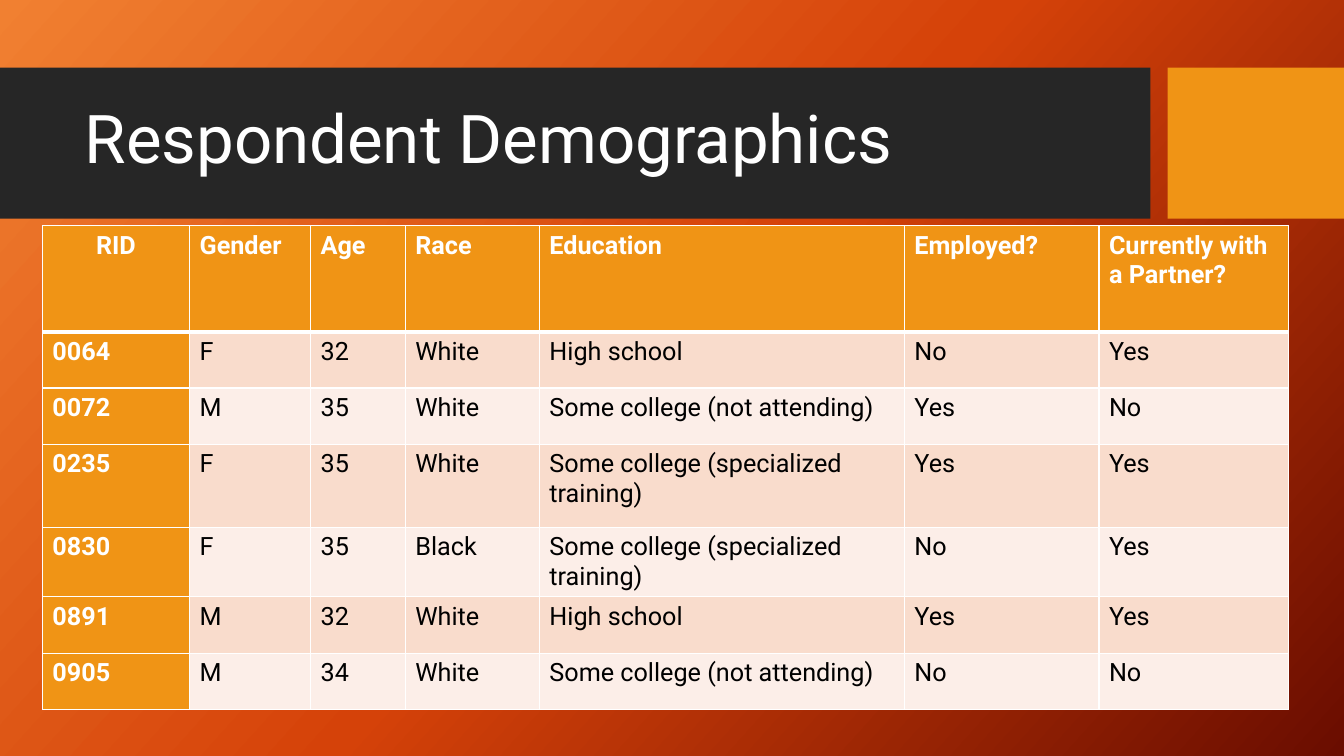
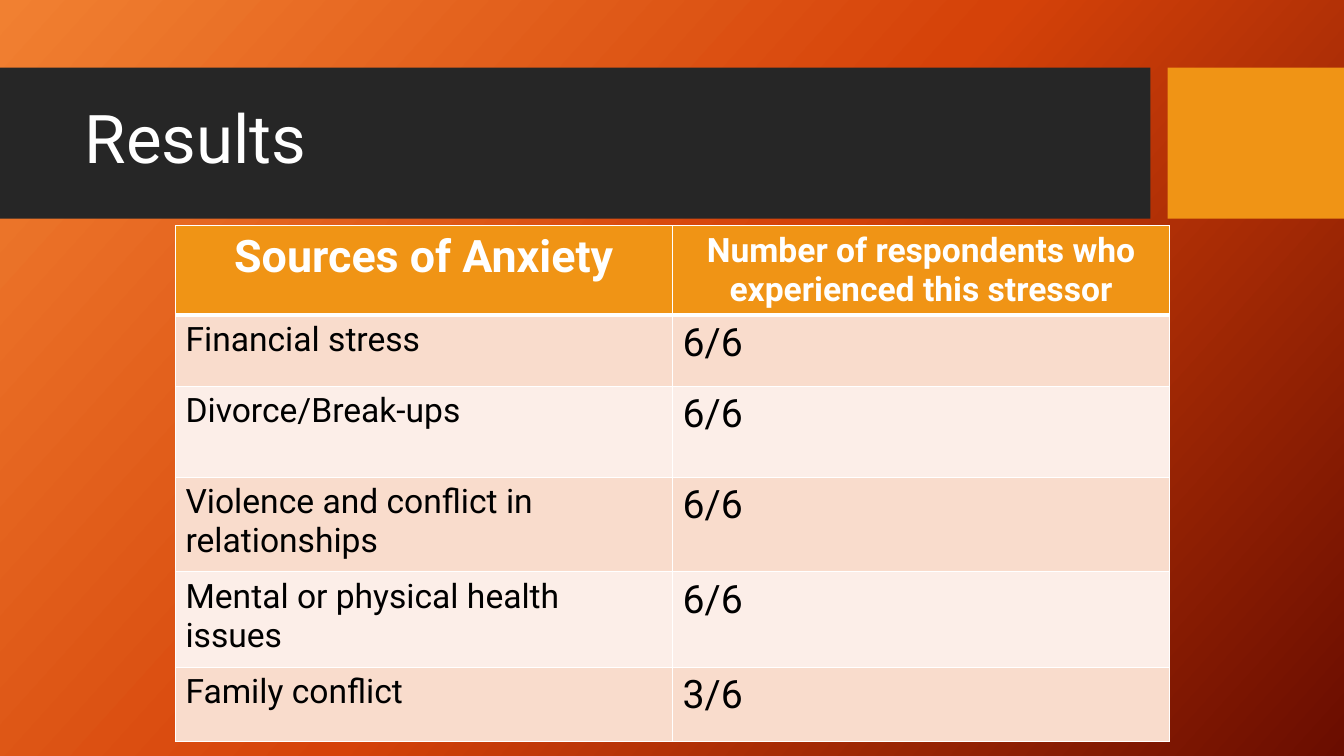
from copy import deepcopy

from lxml import etree
from pptx import Presentation
from pptx.dml.color import RGBColor
from pptx.enum import shapes, text
from pptx.oxml import ns
from pptx.util import Inches, Pt

FONT = "Roboto"
WHITE = RGBColor(0xFF, 0xFF, 0xFF)
BLACK = RGBColor(0x00, 0x00, 0x00)
CHARCOAL = RGBColor(0x26, 0x26, 0x26)
AMBER = RGBColor(0xF0, 0x94, 0x15)
STRIPES = RGBColor(0xF9, 0xDC, 0xCC), RGBColor(0xFC, 0xEE, 0xE8)
GLOW = RGBColor(0xF1, 0x80, 0x31), RGBColor(0xD5, 0x42, 0x09), RGBColor(0x6A, 0x0D, 0x00)

BANDS = [((0, 0.67, 11.41, 1.5), CHARCOAL), ((11.58, 0.67, 1.75, 1.5), AMBER)]
TITLE_BOX = (0.74, 0.82, 10.51, 1.18)
TABLE_TOP = 2.24

DEMOGRAPHICS = [
    ["RID", "Gender", "Age", "Race", "Education", "Employed?", "Currently with a Partner?"],
    ["0064", "F", "32", "White", "High school", "No", "Yes"],
    ["0072", "M", "35", "White", "Some college (not attending)", "Yes", "No"],
    ["0235", "F", "35", "White", "Some college (specialized training)", "Yes", "Yes"],
    ["0830", "F", "35", "Black", "Some college (specialized training)", "No", "Yes"],
    ["0891", "M", "32", "White", "High school", "Yes", "Yes"],
    ["0905", "M", "34", "White", "Some college (not attending)", "No", "No"],
]
STRESSORS = [
    ["Sources of Anxiety", "Number of respondents who experienced this stressor"],
    ["Financial stress", "6/6"],
    ["Divorce/Break-ups", "6/6"],
    ["Violence and conflict in relationships", "6/6"],
    ["Mental or physical health issues", "6/6"],
    ["Family conflict", "3/6"],
]


def paint_background(layout):
    """Give the layout its diagonal three-colour gradient."""
    fill = layout.background.fill
    fill.gradient()
    fill.gradient_angle = 360 - 42
    stop_list = layout.element.find(".//" + ns.qn("a:gsLst"))
    stop_list.append(deepcopy(stop_list[-1]))
    for index, (stop, color) in enumerate(zip(fill.gradient_stops, GLOW)):
        stop.color.rgb = color
        stop.position = index / 2


def style_runs(para, size, color, bold=False):
    """Format every run of a paragraph."""
    for span in para.runs:
        span.font.name = FONT
        span.font.size = Pt(size)
        span.font.bold = bold
        span.font.color.rgb = color


def add_titled_page(deck, layout, title):
    """Add a page with the title bands and the title over them."""
    page = deck.slides.add_slide(layout)
    for box, color in BANDS:
        band = page.shapes.add_shape(shapes.MSO_SHAPE.RECTANGLE, *map(Inches, box))
        band.shadow.inherit = False
        band.fill.solid()
        band.fill.fore_color.rgb = color
        band.line.fill.background()
    heading = page.shapes.title
    page.shapes.element.append(heading.element)
    heading.left, heading.top, heading.width, heading.height = map(Inches, TITLE_BOX)
    frame = heading.text_frame
    frame.text = title
    frame.word_wrap = True
    frame.vertical_anchor = text.MSO_ANCHOR.MIDDLE
    para = frame.paragraphs[0]
    para.alignment = text.PP_ALIGN.LEFT
    para.line_spacing = 0.9
    style_runs(para, 48, WHITE)
    return page


def set_borders(cell, top, bottom):
    """Draw white borders, with the top and bottom widths in points."""
    properties = cell._tc.get_or_add_tcPr()
    for side, width in (("L", 1), ("R", 1), ("T", top), ("B", bottom)):
        line = etree.SubElement(properties, ns.qn("a:ln" + side), w=str(Pt(width)))
        fill = etree.SubElement(line, ns.qn("a:solidFill"))
        etree.SubElement(fill, ns.qn("a:srgbClr"), val=str(WHITE))


def add_grid(page, left, widths, heights, rows, head_sizes, body_sizes, centred, key_column):
    """Add a striped table; centred counts the centred header cells."""
    frame = page.shapes.add_table(
        len(rows), len(widths), Inches(left), Inches(TABLE_TOP),
        Inches(sum(widths)), Inches(sum(heights)))
    table = frame.table
    table.first_col = key_column
    for column, width in zip(table.columns, widths):
        column.width = Inches(width)
    for row, height in zip(table.rows, heights):
        row.height = Inches(height)
    for r, values in enumerate(rows):
        sizes = body_sizes if r else head_sizes
        for c, value in enumerate(values):
            cell = table.cell(r, c)
            accent = r == 0 or (key_column and c == 0)
            set_borders(cell, 3 if r == 1 else 1, 3 if r == 0 else 1)
            cell.fill.solid()
            cell.fill.fore_color.rgb = AMBER if accent else STRIPES[(r - 1) % 2]
            cell.text_frame.text = value
            para = cell.text_frame.paragraphs[0]
            if r == 0 and c < centred:
                para.alignment = text.PP_ALIGN.CENTER
            style_runs(para, sizes[c], WHITE if accent else BLACK, accent)


def add_demographics(deck, layout):
    """Build the page that lists the respondents."""
    page = add_titled_page(deck, layout, "Respondent Demographics")
    add_grid(page, 0.42, [1.46, 1.2, 0.94, 1.33, 3.62, 1.93, 1.88],
             [1.05, 0.56, 0.56, 0.82, 0.69, 0.56, 0.56], DEMOGRAPHICS,
             [18] * 7, [18] * 7, centred=1, key_column=True)


def add_results(deck, layout):
    """Build the page that counts the sources of anxiety."""
    page = add_titled_page(deck, layout, "Results")
    add_grid(page, 1.74, [4.93, 4.93], [0.88, 0.71, 0.9, 0.94, 0.95, 0.73], STRESSORS,
             [32, 24], [24, 28], centred=2, key_column=False)


def main():
    """Build and save the deck."""
    deck = Presentation()
    deck.slide_width, deck.slide_height = Inches(13.33), Inches(7.5)
    layout = deck.slide_layouts[5]
    paint_background(layout)
    add_demographics(deck, layout)
    add_results(deck, layout)
    deck.save("out.pptx")


if __name__ == "__main__":
    main()
